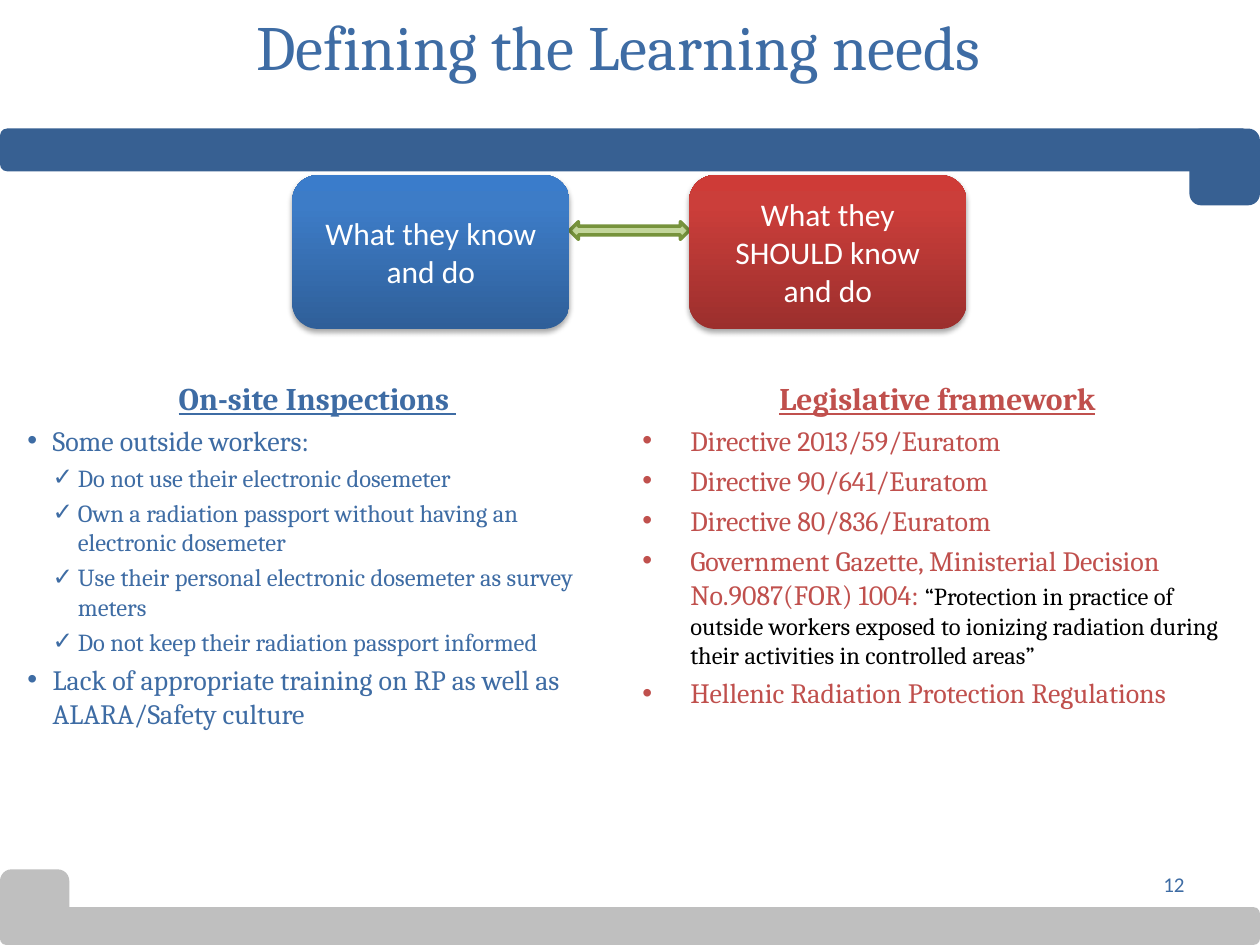
from collections import namedtuple

import lxml.etree
import pptx
import pptx.dml.color
import pptx.enum.shapes
import pptx.enum.text
import pptx.oxml.ns
import pptx.util

RGB = pptx.dml.color.RGBColor
BAND_BLUE = RGB(0x37, 0x60, 0x92)
BAND_GREY = RGB(0xBF, 0xBF, 0xBF)
TEXT_BLUE = RGB(0x3E, 0x6C, 0xA4)
TEXT_RED = RGB(0xC0, 0x50, 0x4D)
ARROW_FILL = RGB(0xC3, 0xD6, 0x9B)
ARROW_EDGE = RGB(0x77, 0x93, 0x3C)
WHITE = RGB(0xFF, 0xFF, 0xFF)
BLACK = RGB(0, 0, 0)
BLUE_STOPS = ((0, RGB(0x2F, 0x5F, 0x99)), (80, RGB(0x3D, 0x7C, 0xC7)), (100, RGB(0x3A, 0x7C, 0xCB)))
RED_STOPS = ((0, RGB(0x9C, 0x2F, 0x2D)), (80, RGB(0xCB, 0x3E, 0x3A)), (100, RGB(0xCE, 0x3B, 0x37)))

COLUMNS, ROWS = 100, 75
WIDTH, HEIGHT = pptx.util.Inches(10), pptx.util.Inches(7.5)
SPACE_RATIO = 0.23

Box = namedtuple("Box", "column row columns rows")
Entry = namedtuple("Entry", "bullet indent hang spans")
SHAPE = pptx.enum.shapes.MSO_SHAPE
ALIGN = pptx.enum.text.PP_ALIGN
ANCHOR = pptx.enum.text.MSO_ANCHOR


def across(columns):
    return round(WIDTH * columns / COLUMNS)


def down(rows):
    return round(HEIGHT * rows / ROWS)


def place(box):
    return across(box.column), down(box.row), across(box.columns), down(box.rows)


def add_node(parent, tag, **attributes):
    node = lxml.etree.SubElement(parent, pptx.oxml.ns.qn(tag))
    for name, value in attributes.items():
        node.set(name, str(value))
    return node


def add_span(para, text, size, color, font, strong=False):
    span = para.add_run()
    span.text = text
    span.font.size = pptx.util.Pt(size)
    span.font.name = font
    span.font.color.rgb = color
    span.font.bold = strong
    span.font.underline = strong


def add_plain_shape(page, kind, box, color):
    shape = page.shapes.add_shape(kind, *place(box))
    shape.shadow.inherit = False
    shape.fill.solid()
    shape.fill.fore_color.rgb = color
    shape.line.fill.background()
    return shape


def add_text(page, box, anchor):
    frame = page.shapes.add_textbox(*place(box)).text_frame
    frame.word_wrap = True
    frame.vertical_anchor = anchor
    return frame


def add_line_of_text(page, box, text, size, font, align, anchor):
    para = add_text(page, box, anchor).paragraphs[0]
    para.alignment = align
    add_span(para, text, size, TEXT_BLUE, font)


def add_band(page, bar, tab, color):
    for box in (bar, tab):
        add_plain_shape(page, SHAPE.ROUNDED_RECTANGLE, box, color)


def add_card(page, box, text, stops):
    card = add_plain_shape(page, SHAPE.ROUNDED_RECTANGLE, box, stops[0][1])
    card.fill.gradient()
    card.fill.gradient_angle = 90
    properties = card._element.spPr
    stop_list = properties.find(".//" + pptx.oxml.ns.qn("a:gsLst"))
    for old in list(stop_list):
        stop_list.remove(old)
    for position, color in stops:
        stop = add_node(stop_list, "a:gs", pos=position * 1000)
        add_node(stop, "a:srgbClr", val=color)
    effects = properties.find(pptx.oxml.ns.qn("a:effectLst"))
    shadow = add_node(effects, "a:outerShdw", blurRad=pptx.util.Pt(3.1),
                      dist=pptx.util.Pt(1.8), dir=5400000, rotWithShape=0)
    add_node(add_node(shadow, "a:srgbClr", val="000000"), "a:alpha", val=35000)
    frame = card.text_frame
    frame.word_wrap = True
    frame.vertical_anchor = ANCHOR.MIDDLE
    para = frame.paragraphs[0]
    para.alignment = ALIGN.CENTER
    add_span(para, text, 18, WHITE, "Calibri")


def add_comparison(page, box, cards):
    card_columns = 22
    gap = box.columns - 2 * card_columns
    arrow = add_plain_shape(
        page, SHAPE.LEFT_RIGHT_ARROW,
        Box(box.column + card_columns, box.row + 3.7, gap, 1.4), ARROW_FILL)
    arrow.line.color.rgb = ARROW_EDGE
    arrow.line.width = pptx.util.Pt(2)
    for index, (text, stops) in enumerate(cards):
        left = box.column + index * (card_columns + gap)
        add_card(page, Box(left, box.row, card_columns, box.rows), text, stops)


def add_list(page, box, heading, color, entries):
    frame = add_text(page, box, ANCHOR.TOP)
    title = frame.paragraphs[0]
    title.alignment = ALIGN.CENTER
    add_span(title, heading, 18, color, "Cambria", strong=True)
    for entry in entries:
        para = frame.add_paragraph()
        para.space_before = pptx.util.Pt(SPACE_RATIO * entry.spans[0][1])
        properties = para._p.get_or_add_pPr()
        properties.set("marL", str(across(entry.indent)))
        properties.set("indent", str(-across(entry.hang)))
        add_node(properties, "a:buFont", typeface="Arial")
        add_node(properties, "a:buChar", char=entry.bullet)
        for text, size, span_color in entry.spans:
            add_span(para, text, size, span_color, "Cambria")


def point(text, hang, color):
    return Entry("•", hang, hang, [(text, 16, color)])


def check(text):
    return Entry("✓", 4, 2, [(text, 14, TEXT_BLUE)])


def main():
    deck = pptx.Presentation()
    deck.slide_width, deck.slide_height = WIDTH, HEIGHT
    page = deck.slides.add_slide(deck.slide_layouts[6])

    add_band(page, Box(0, 10.2, 99.2, 3.4), Box(94.4, 10.2, 5.6, 6.1), BAND_BLUE)
    add_band(page, Box(0, 72, 100, 3), Box(0, 69, 5.5, 5.7), BAND_GREY)
    add_line_of_text(page, Box(4.1, 0.1, 90, 10.1), "Defining the Learning needs",
                     36, "Cambria", ALIGN.CENTER, ANCHOR.TOP)
    add_line_of_text(page, Box(71.7, 68.2, 23.3, 4), "12",
                     12, "Calibri", ALIGN.RIGHT, ANCHOR.MIDDLE)
    add_comparison(page, Box(23.2, 13.9, 53.5, 12.2), [
        ("What they know and do", BLUE_STOPS),
        ("What they SHOULD know and do", RED_STOPS)])

    gazette = Entry("•", 3.8, 3.8, [
        ("Government Gazette, Ministerial Decision No.9087(FOR) 1004: ", 16, TEXT_RED),
        ("“Protection in practice of outside workers exposed to ionizing radiation "
         "during their activities in controlled areas”", 14, BLACK)])
    directives = [point(f"Directive {number}/Euratom", 3.8, TEXT_RED)
                  for number in ("2013/59", "90/641", "80/836")]
    add_list(page, Box(50, 29.6, 48.8, 29.1), "Legislative framework", TEXT_RED, [
        *directives, gazette,
        point("Hellenic Radiation Protection Regulations", 3.8, TEXT_RED)])
    add_list(page, Box(1.2, 29.6, 48, 40.2), "On-site Inspections ", TEXT_BLUE, [
        point("Some outside workers:", 2, TEXT_BLUE),
        check("Do not use their electronic dosemeter"),
        check("Own a radiation passport without having an electronic dosemeter"),
        check("Use their personal electronic dosemeter as survey meters"),
        check("Do not keep their radiation passport informed"),
        point("Lack of appropriate training on RP as well as ALARA/Safety culture",
              2, TEXT_BLUE)])
    deck.save("out.pptx")


if __name__ == "__main__":
    main()
